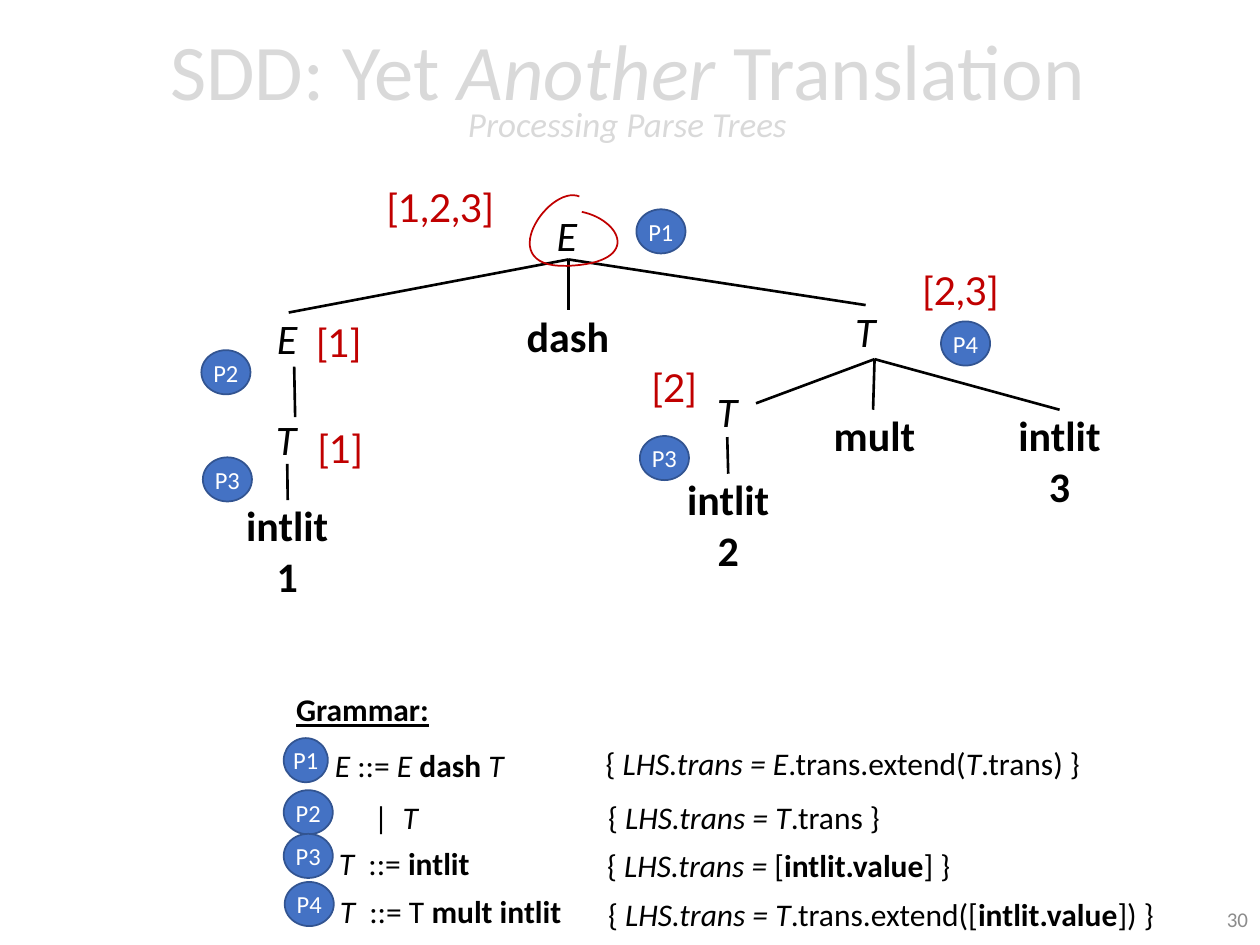
"""Build a slide that traces a translation through a parse tree and its grammar."""
from lxml import etree
from pptx import Presentation
from pptx.dml.color import RGBColor
from pptx.enum import shapes, text
from pptx.oxml import ns
from pptx.util import Cm, Pt

BLACK = RGBColor(0x00, 0x00, 0x00)
WHITE = RGBColor(0xFF, 0xFF, 0xFF)
RED = RGBColor(0xC0, 0x00, 0x00)
BLUE = RGBColor(0x44, 0x72, 0xC4)
DARK_BLUE = RGBColor(0x32, 0x54, 0x91)
PALE_GRAY = RGBColor(0xD9, 0xD9, 0xD9)
GRAY = RGBColor(0x8C, 0x8C, 0x8C)
LEFT, CENTER, RIGHT = text.PP_ALIGN.LEFT, text.PP_ALIGN.CENTER, text.PP_ALIGN.RIGHT


def add_runs(paragraph, runs, size, color, font="Calibri"):
    for words, style in runs:
        run = paragraph.add_run()
        run.text = words
        run.font.name = font
        run.font.size = Pt(size)
        run.font.color.rgb = color
        run.font.bold = "b" in style
        run.font.italic = "i" in style
        run.font.underline = "u" in style


def add_text(box, lines, size, color, font="Calibri", align=LEFT, wrap=False, inset=0.13):
    left, top, width, height = box
    frame = slide.shapes.add_textbox(Cm(left), Cm(top), Cm(width), Cm(height)).text_frame
    frame.word_wrap = wrap
    frame.margin_top = frame.margin_bottom = Cm(inset)
    for index, runs in enumerate(lines):
        paragraph = frame.add_paragraph() if index else frame.paragraphs[0]
        paragraph.alignment = align
        add_runs(paragraph, runs, size, color, font)
    return frame


presentation = Presentation()
presentation.slide_width = Cm(25.4)
presentation.slide_height = Cm(19.05)
slide = presentation.slides.add_slide(presentation.slide_layouts[6])

title_runs = [("SDD: Yet ", ""), ("Another", "i"), (" Translation", "")]
title = add_text((0.51, 0.08, 24.28, 3.68), [title_runs], 45, PALE_GRAY, align=CENTER, wrap=True)
title.vertical_anchor = text.MSO_ANCHOR.MIDDLE
title_paragraph = title.paragraphs[0]
title_paragraph.line_spacing = 0.7
title_paragraph.add_line_break()
add_runs(title_paragraph, [("Processing Parse Trees", "i")], 20, PALE_GRAY)

branches = [
    ((11.46, 5.23), [(5.82, 6.3), (11.46, 6.25), (17.45, 6.15)]),
    ((17.63, 7.24), [(15.24, 8.13), (17.6, 8.26), (21.36, 8.26)]),
    ((5.93, 7.39), [(5.95, 8.41)]),
    ((5.79, 9.35), [(5.8, 10.08)]),
    ((14.66, 8.81), [(14.68, 9.55)]),
]
for (start_x, start_y), children in branches:
    for end_x, end_y in children:
        branch = slide.shapes.add_connector(
            shapes.MSO_CONNECTOR.STRAIGHT, Cm(start_x), Cm(start_y), Cm(end_x), Cm(end_y))
        branch.line.color.rgb = BLACK
        branch.line.width = Pt(1.5)
        etree.SubElement(branch._element.spPr, ns.qn("a:effectLst"))

nonterminals = [("E", 10.97, 4.22), ("E", 5.33, 6.3), ("T", 5.31, 8.33),
                ("T", 16.99, 6.15), ("T", 14.2, 7.77)]
for symbol, left, top in nonterminals:
    add_text((left, top, 0.94, 1.02), [[(symbol, "i")]], 24, BLACK, inset=0)

tokens = [(["dash"], 10.36, 6.25), (["mult"], 16.54, 8.26), (["intlit", "1"], 4.7, 10.08),
          (["intlit", "2"], 13.59, 9.55), (["intlit", "3"], 20.27, 8.26)]
for words, left, top in tokens:
    add_text((left, top, 2.18, 1.03 * len(words)), [[(word, "b")] for word in words],
             24, BLACK, align=CENTER, inset=0)

translations = [("[1,2,3]", 7.54, 3.58, 3.12), ("[2,3]", 18.34, 5.26, 2.51),
                ("[2]", 12.88, 7.21, 1.73), ("[1]", 6.12, 6.3, 1.5), ("[1]", 6.15, 8.43, 1.5)]
for value, left, top, width in translations:
    add_text((left, top, width, 1.19), [[(value, "")]], 22, RED, font="Lato")

root_curves = [
    [(11.68, 3.96), (11.07, 3.71), (9.91, 5.41), (11.43, 5.36)],
    [(11.43, 5.36), (12.93, 5.31), (12.55, 4.45), (11.73, 4.27)],
]
steps = 30
loop_points = []
for curve in root_curves:
    for step in range(steps + 1):
        t = step / steps
        weights = ((1 - t) ** 3, 3 * t * (1 - t) ** 2, 3 * t ** 2 * (1 - t), t ** 3)
        loop_points.append(tuple(
            Cm(sum(weight * point[axis] for weight, point in zip(weights, curve)))
            for axis in (0, 1)))
builder = slide.shapes.build_freeform(*loop_points[0])
builder.add_line_segments(loop_points[1:], close=False)
root_loop = builder.convert_to_shape()
root_loop.shadow.inherit = False
root_loop.fill.background()
root_loop.line.color.rgb = RED
root_loop.line.width = Pt(1)

add_text((5.72, 13.79, 3.48, 1.02), [[("Grammar:", "bu")]], 18, BLACK, wrap=True)
productions = [
    (6.5, 14.91, [("E ", "i"), ("::=", ""), (" E ", "i"), ("dash", "b"), (" T", "i")]),
    (7.29, 15.95, [("|", ""), ("  T", "i")]),
    (6.58, 16.89, [("T  ", "i"), ("::= ", ""), ("intlit", "b")]),
    (6.6, 17.86, [("T  ", "i"), ("::= T ", ""), ("mult intlit", "b")]),
]
for left, top, runs in productions:
    add_text((left, top, 18.87 - left, 1.02), [runs], 18, BLACK, wrap=True)

actions = [
    (11.96, 14.86, 10.16, [("LHS.trans = E", "i"), (".trans.extend(", ""), ("T", "i"),
                           (".trans) }", "")]),
    (12.01, 15.95, 5.99, [("LHS.trans = T", "i"), (".trans }", "")]),
    (11.99, 16.92, 7.49, [("LHS.trans = ", "i"), ("[", ""), ("intlit.value", "b"), ("] }", "")]),
    (12.01, 17.91, 11.51, [("LHS.trans = T", "i"), (".trans.extend([", ""),
                           ("intlit.value", "b"), ("]) }", "")]),
]
for left, top, width, runs in actions:
    add_text((left, top, width, 1.02), [[("{ ", "")] + runs], 18, BLACK)

badges = [
    ("P1", 12.83, 4.22, 0.99), ("P2", 4.06, 7.06, 0.99), ("P3", 4.09, 9.22, 0.99),
    ("P3", 12.9, 8.79, 0.99), ("P4", 18.97, 6.48, 0.99),
    ("P1", 5.72, 14.88, 0.89), ("P2", 5.72, 15.93, 0.99),
    ("P3", 5.72, 16.81, 0.99), ("P4", 5.74, 17.78, 0.99),
]
for label, left, top, width in badges:
    badge = slide.shapes.add_shape(
        shapes.MSO_SHAPE.OVAL, Cm(left), Cm(top), Cm(width), Cm(0.89))
    badge.shadow.inherit = False
    badge.fill.solid()
    badge.fill.fore_color.rgb = BLUE
    badge.line.color.rgb = DARK_BLUE
    badge.line.width = Pt(1)
    frame = badge.text_frame
    frame.margin_left = frame.margin_right = frame.margin_top = frame.margin_bottom = Cm(0)
    frame.vertical_anchor = text.MSO_ANCHOR.MIDDLE
    frame.word_wrap = True
    frame.paragraphs[0].alignment = CENTER
    add_runs(frame.paragraphs[0], [(label, "")], 14, WHITE)

page_number = add_text((19.69, 18.01, 5.72, 1.02), [[("30", "")]], 12, GRAY, align=RIGHT, wrap=True)
page_number.vertical_anchor = text.MSO_ANCHOR.MIDDLE

presentation.save("out.pptx")
